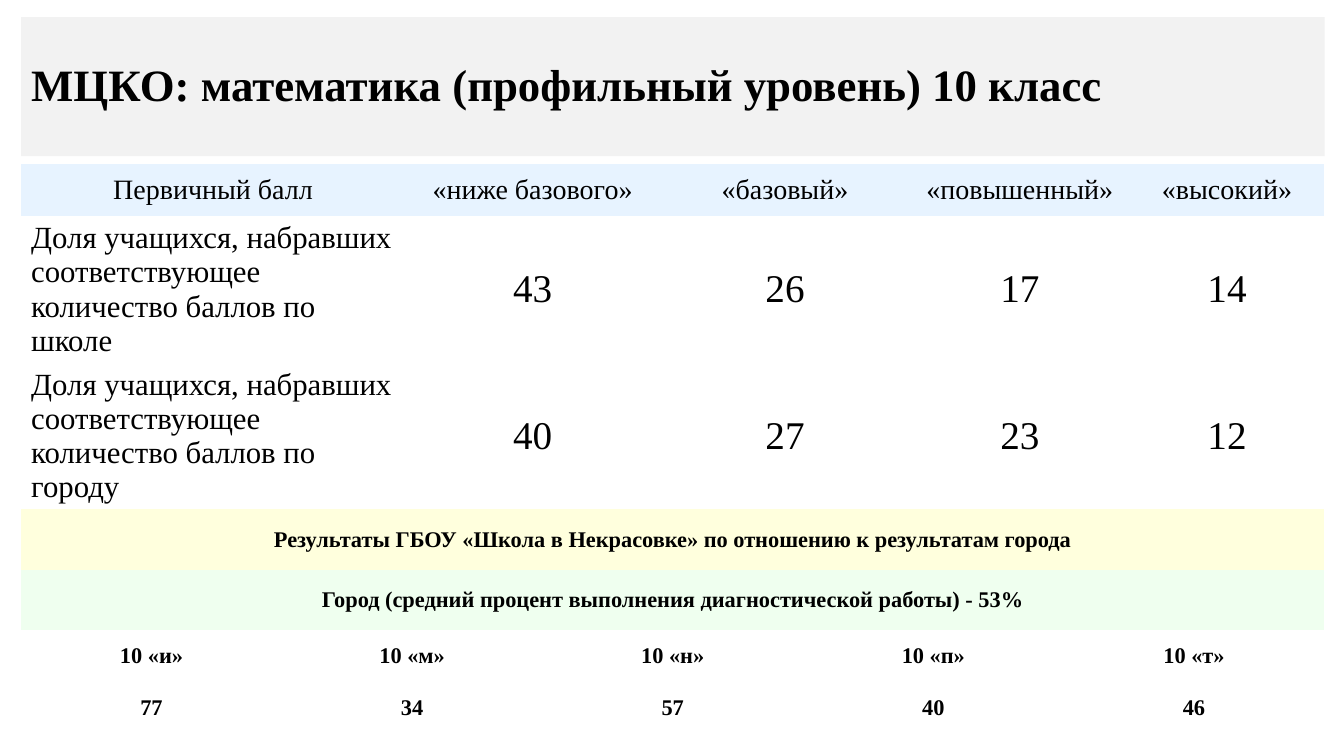
from dataclasses import dataclass

import pptx
import pptx.dml.color
import pptx.enum.text
import pptx.oxml.ns
import pptx.util

Pt = pptx.util.Pt
RGBColor = pptx.dml.color.RGBColor
Align = pptx.enum.text.PP_ALIGN
Anchor = pptx.enum.text.MSO_ANCHOR

BLACK = RGBColor(0x00, 0x00, 0x00)
WHITE = RGBColor(0xFF, 0xFF, 0xFF)
GRAY = RGBColor(0xF2, 0xF2, 0xF2)
BLUE = RGBColor(0xE7, 0xF3, 0xFF)
YELLOW = RGBColor(0xFF, 0xFF, 0xDD)
GREEN = RGBColor(0xEF, 0xFF, 0xEF)

FONT = "Times New Roman"
PLAIN_STYLE = "{2D5ABB26-0587-4C30-8999-92F81FD0307C}"
LEFT, WIDTH = 15.1, 931
LEVELS = [0, 274.3, 456.5, 635, 792, WIDTH]
CLASSES = [i * WIDTH / 5 for i in range(6)]
WHOLE = [0, WIDTH]
EDGES = sorted({*LEVELS, *CLASSES})


@dataclass
class Row:
    height: float
    bounds: list[float]
    texts: list[str]
    size: float
    fill: RGBColor = WHITE
    bold: bool = False
    label: float | None = None  # size of a left-aligned first cell


ROWS = [
    Row(37.4, LEVELS, ["Первичный балл", "«ниже базового»", "«базовый»",
                       "«повышенный»", "«высокий»"], 20, BLUE),
    Row(103, LEVELS, ["Доля учащихся, набравших соответствующее количество "
                      "баллов по школе", "43", "26", "17", "14"], 28, label=22),
    Row(103, LEVELS, ["Доля учащихся, набравших соответствующее количество "
                      "баллов по городу", "40", "27", "23", "12"], 28, label=22),
    Row(43, WHOLE, ["Результаты ГБОУ «Школа в Некрасовке» по отношению "
                    "к результатам города"], 16, YELLOW, True),
    Row(43, WHOLE, ["Город (средний процент выполнения диагностической "
                    "работы) - 53%"], 16, GREEN, True),
    Row(37.4, CLASSES, ["10 «и»", "10 «м»", "10 «н»", "10 «п»", "10 «т»"],
        16, bold=True),
    Row(37.4, CLASSES, ["77", "34", "57", "40", "46"], 16, bold=True),
]


def format_text(par, size: float, bold: bool, align: Align) -> None:
    par.alignment = align
    par.font.name = FONT
    par.font.size = Pt(size)
    par.font.bold = bold
    par.font.color.rgb = BLACK


def add_title(slide) -> None:
    title = slide.shapes.title
    title.left, title.top = Pt(LEFT), Pt(12.2)
    title.width, title.height = Pt(WIDTH), Pt(99.4)
    title.fill.solid()
    title.fill.fore_color.rgb = GRAY
    frame = title.text_frame
    frame.text = "МЦКО: математика (профильный уровень) 10 класс"
    frame.auto_size = pptx.enum.text.MSO_AUTO_SIZE.NONE
    frame.vertical_anchor = Anchor.MIDDLE
    par = frame.paragraphs[0]
    par.line_spacing = 0.9
    format_text(par, 32, True, Align.LEFT)


def fill_row(table, index: int, row: Row) -> None:
    """Merge the grid columns between the row's bounds and write its cells."""
    table.rows[index].height = Pt(row.height)
    for i, text in enumerate(row.texts):
        first = EDGES.index(row.bounds[i])
        last = EDGES.index(row.bounds[i + 1]) - 1
        cell = table.cell(index, first)
        if last > first:
            cell.merge(table.cell(index, last))
        cell.fill.solid()
        cell.fill.fore_color.rgb = row.fill
        cell.vertical_anchor = Anchor.MIDDLE
        cell.text = text
        par = cell.text_frame.paragraphs[0]
        if i == 0 and row.label:
            format_text(par, row.label, row.bold, Align.LEFT)
        else:
            format_text(par, row.size, row.bold, Align.CENTER)


def add_scores(slide) -> None:
    frame = slide.shapes.add_table(
        len(ROWS), len(EDGES) - 1, Pt(LEFT), Pt(117.2), Pt(WIDTH),
        Pt(sum(row.height for row in ROWS)))
    for style in frame.element.iter(pptx.oxml.ns.qn("a:tableStyleId")):
        style.text = PLAIN_STYLE
    table = frame.table
    table.first_row = False
    table.horz_banding = False
    for col, start, end in zip(table.columns, EDGES, EDGES[1:]):
        col.width = Pt(end - start)
    for index, row in enumerate(ROWS):
        fill_row(table, index, row)


def main() -> None:
    deck = pptx.Presentation()
    deck.slide_width, deck.slide_height = Pt(960), Pt(540)
    slide = deck.slides.add_slide(deck.slide_layouts.get_by_name("Title Only"))
    add_title(slide)
    add_scores(slide)
    deck.save("out.pptx")


if __name__ == "__main__":
    main()
